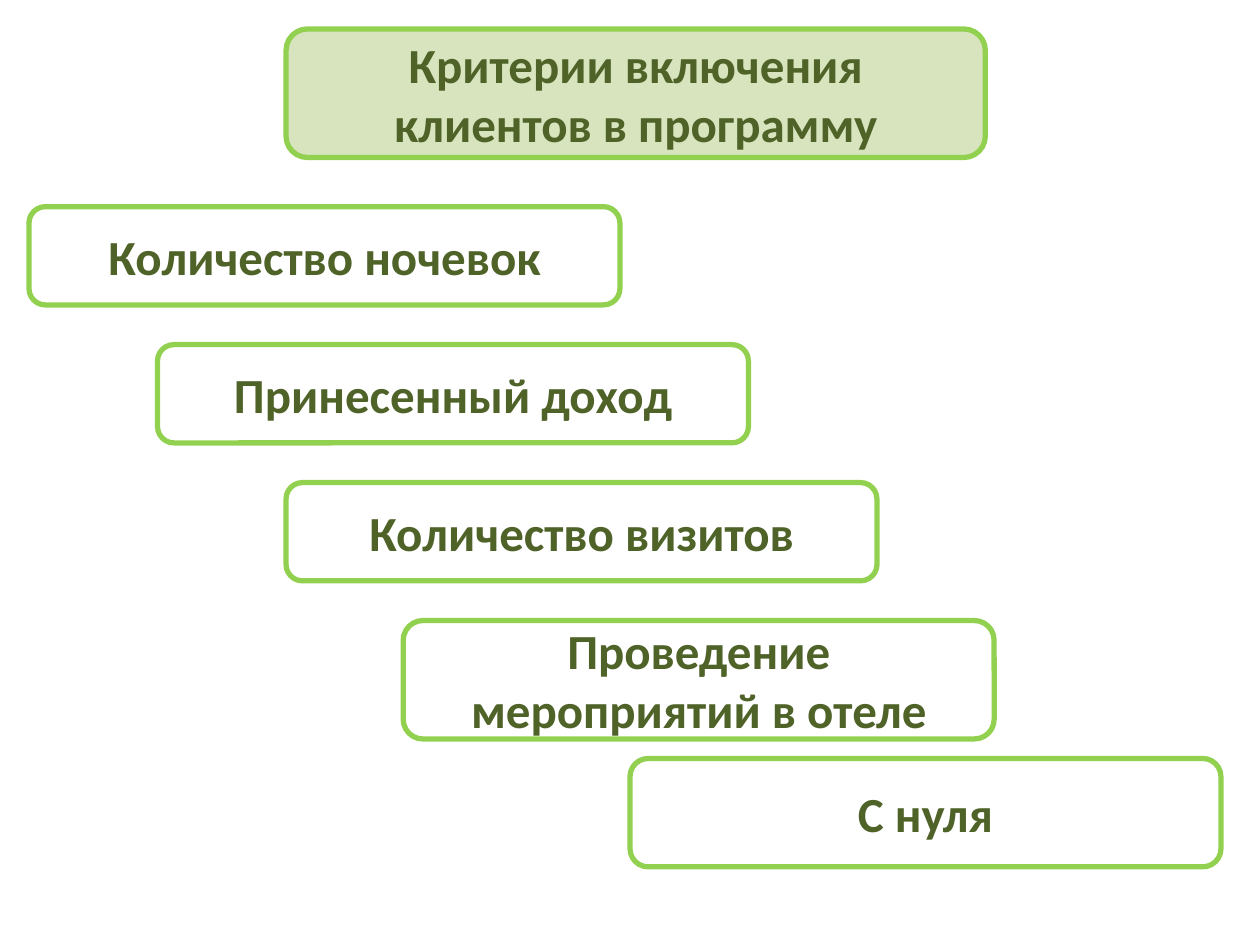
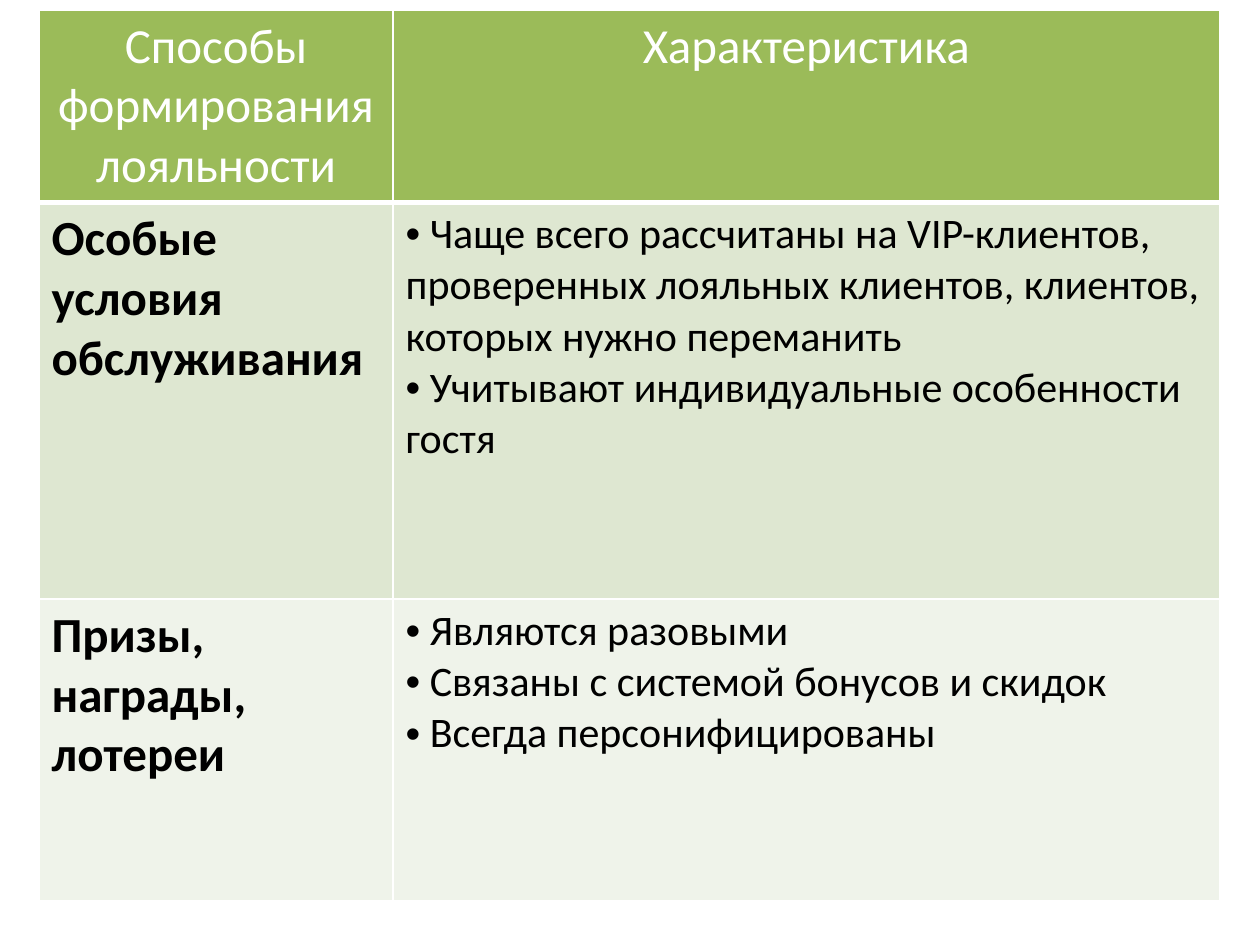
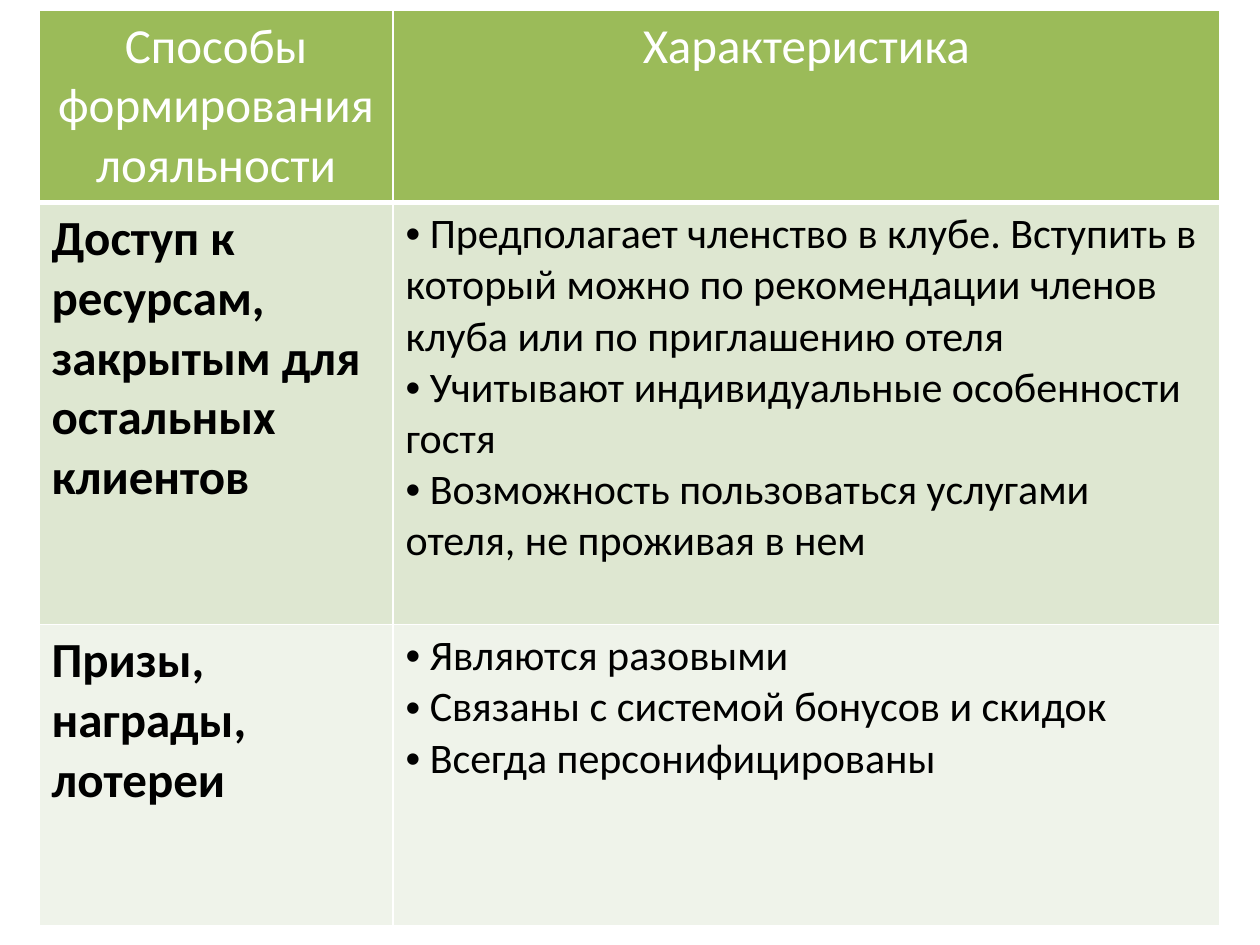
from lxml import etree
from pptx import Presentation
from pptx import util as u
from pptx.dml.color import RGBColor
from pptx.enum import shapes, text
from pptx.oxml import ns

FONT = "Calibri"
WHITE = RGBColor(0xFF, 0xFF, 0xFF)
BLACK = RGBColor(0x00, 0x00, 0x00)
LIME = RGBColor(0x92, 0xD0, 0x50)
PALE_GREEN = RGBColor(0xD7, 0xE4, 0xBD)
DARK_GREEN = RGBColor(0x4F, 0x62, 0x28)
HEADER_GREEN = RGBColor(0x9B, 0xBB, 0x59)
BAND_FILLS = (RGBColor(0xDE, 0xE7, 0xD1), RGBColor(0xEF, 0xF3, 0xEA))

HEADINGS = ("Способы формирования лояльности", "Характеристика")
PRIZES = ("Призы, награды, лотереи", (
    "Являются разовыми",
    "Связаны с системой бонусов и скидок",
    "Всегда персонифицированы",
))
SPECIAL_TERMS = ("Особые условия обслуживания", (
    "Чаще всего рассчитаны на VIP-клиентов, проверенных лояльных клиентов, "
    "клиентов, которых нужно переманить",
    "Учитывают индивидуальные особенности гостя",
))
CLOSED_ACCESS = ("Доступ к ресурсам, закрытым для остальных клиентов", (
    "Предполагает членство в клубе. Вступить в который можно по "
    "рекомендации членов клуба или по приглашению отеля",
    "Учитывают индивидуальные особенности гостя",
    "Возможность пользоваться услугами отеля, не проживая в нем",
))

# Label, left edge and height of each step
CRITERIA = (
    ("Количество ночевок", 0.23, 0.78),
    ("Принесенный доход", 1.25, 0.78),
    ("Количество визитов", 2.27, 0.78),
    ("Проведение мероприятий в отеле", 3.2, 0.94),
    ("С нуля", 5.0, 0.86),
)
STEP_PITCH = 1.095
STEP_WIDTH = 4.69


def add_span(para, words, size, color, bold=False):
    span = para.add_run()
    span.text = words
    span.font.name = FONT
    span.font.size = u.Pt(size)
    span.font.bold = bold
    span.font.color.rgb = color


def add_card(page, box, words, fill=None):
    """Rounded green frame with a centred bold label."""
    card = page.shapes.add_shape(shapes.MSO_SHAPE.ROUNDED_RECTANGLE,
                                 *(u.Inches(length) for length in box))
    card.shadow.inherit = False
    if fill is None:
        card.fill.background()
    else:
        card.fill.solid()
        card.fill.fore_color.rgb = fill
    card.line.color.rgb = LIME
    card.line.width = u.Pt(3)
    frame = card.text_frame
    frame.word_wrap = True
    frame.vertical_anchor = text.MSO_ANCHOR.MIDDLE
    para = frame.paragraphs[0]
    para.alignment = text.PP_ALIGN.CENTER
    add_span(para, words, 28, DARK_GREEN, bold=True)


def add_criteria_stairs(page, left, top):
    for index, (label, offset, height) in enumerate(CRITERIA):
        box = (left + offset, top + index * STEP_PITCH, STEP_WIDTH, height)
        add_card(page, box, label)


def style_cell(cell, fill, bottom_width=1):
    """Fill the cell and give it white borders."""
    cell.fill.solid()
    cell.fill.fore_color.rgb = fill
    properties = cell._tc.get_or_add_tcPr()
    widths = {"a:lnL": 1, "a:lnR": 1, "a:lnT": 1, "a:lnB": bottom_width}
    for index, (tag, width) in enumerate(widths.items()):
        border = etree.Element(ns.qn(tag), w=str(u.Pt(width)))
        solid = etree.SubElement(border, ns.qn("a:solidFill"))
        etree.SubElement(solid, ns.qn("a:srgbClr"), val=str(WHITE))
        properties.insert(index, border)


def add_bullets(frame, items):
    for index, item in enumerate(items):
        para = frame.add_paragraph() if index else frame.paragraphs[0]
        properties = para._p.get_or_add_pPr()
        etree.SubElement(properties, ns.qn("a:buFont"), typeface="Arial")
        etree.SubElement(properties, ns.qn("a:buChar"), char="•")
        add_span(para, " " + item, 24, BLACK)


def add_methods_table(page, left, top, methods, row_heights):
    """Header row, then a bold method name and its bulleted traits per row."""
    column_widths = (2.81, 6.56)
    grid = page.shapes.add_table(
        len(row_heights), len(column_widths), u.Inches(left), u.Inches(top),
        u.Inches(sum(column_widths)), u.Inches(sum(row_heights))).table
    for column, width in zip(grid.columns, column_widths):
        column.width = u.Inches(width)
    for row, height in zip(grid.rows, row_heights):
        row.height = u.Inches(height)

    # Header
    for cell, heading in zip(grid.rows[0].cells, HEADINGS):
        style_cell(cell, HEADER_GREEN, bottom_width=3)
        para = cell.text_frame.paragraphs[0]
        para.alignment = text.PP_ALIGN.CENTER
        add_span(para, heading, 28, WHITE)

    # Methods
    for index, (name, traits) in enumerate(methods):
        name_cell, traits_cell = grid.rows[index + 1].cells
        for cell in (name_cell, traits_cell):
            style_cell(cell, BAND_FILLS[index % 2])
        add_span(name_cell.text_frame.paragraphs[0], name, 28, BLACK, bold=True)
        add_bullets(traits_cell.text_frame, traits)


def main():
    deck = Presentation()
    deck.slide_width = u.Inches(10)
    deck.slide_height = u.Inches(7.5)
    blank = deck.slide_layouts[6]

    # Criteria
    page = deck.slides.add_slide(blank)
    add_card(page, (2.27, 0.23, 5.55, 1.02), HEADINGS_CARD, PALE_GREEN)
    add_criteria_stairs(page, 0, 1.64)

    # Ways of building loyalty
    for first_method, first_height in ((SPECIAL_TERMS, 3.15), (CLOSED_ACCESS, 3.35)):
        page = deck.slides.add_slide(blank)
        add_methods_table(page, 0.31, 0.08, (first_method, PRIZES),
                          (1.52, first_height, 2.39))

    deck.save("out.pptx")


HEADINGS_CARD = "Критерии включения клиентов в программу"

if __name__ == "__main__":
    main()
